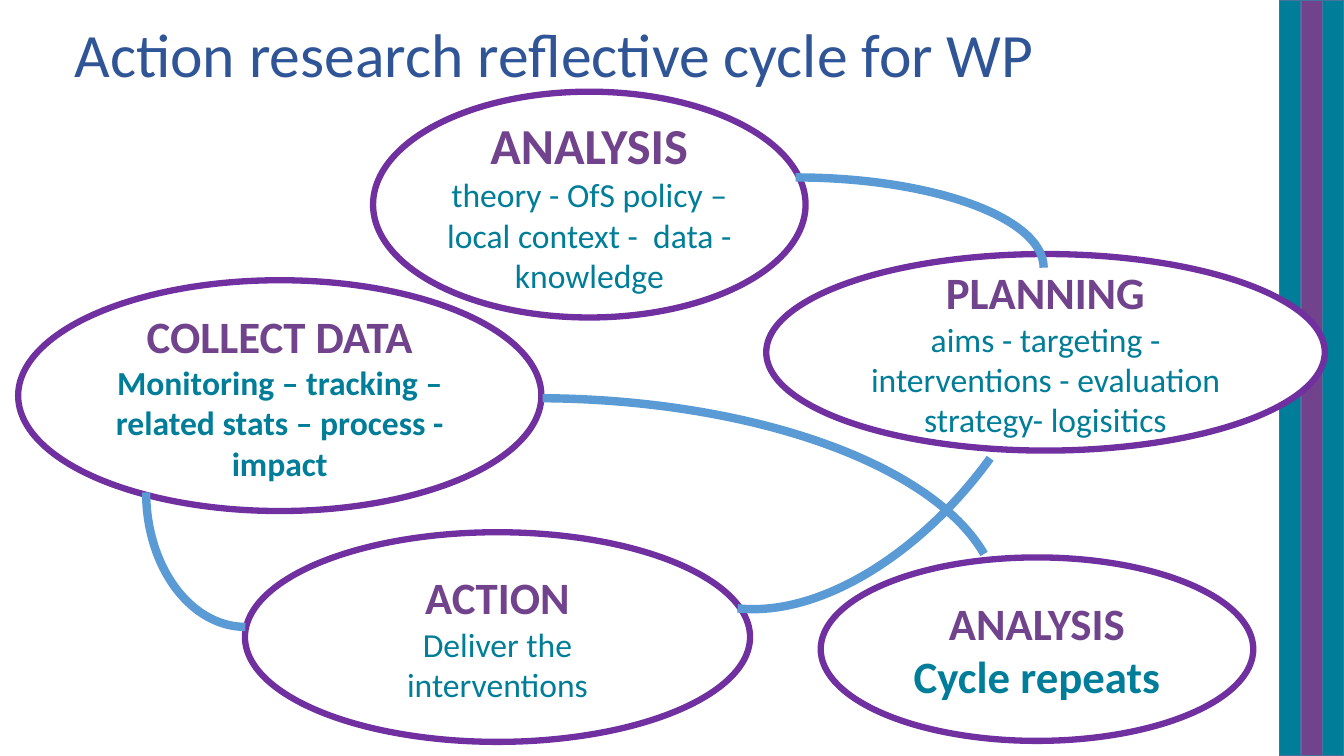
import pptx
import pptx.dml.color
import pptx.enum.shapes
import pptx.enum.text
import pptx.util

RGBColor = pptx.dml.color.RGBColor
TEAL = RGBColor(0x00, 0x7D, 0x98)
PLUM = RGBColor(0x71, 0x43, 0x8D)
VIOLET = RGBColor(0x70, 0x30, 0xA0)
NAVY = RGBColor(0x2F, 0x55, 0x97)
SKY = RGBColor(0x5B, 0x9B, 0xD5)
STEEL = RGBColor(0x43, 0x73, 0x9E)
WHITE = RGBColor(0xFF, 0xFF, 0xFF)

FONT = "Calibri"
WIDTH = pptx.util.Inches(13.33)
HEIGHT = pptx.util.Inches(7.5)
KIND = pptx.enum.shapes.MSO_SHAPE

BAR_LEFT, BAR_WIDTH = 95.2, 1.6

# place, head, head size, body, body size, body bold
STAGES = [
    ((27.76, 12.13, 32.18, 29.87), "ANALYSIS", 36,
     "theory - OfS policy – local context -  data - knowledge", 24, False),
    ((57.01, 33.6, 41.56, 26), "PLANNING", 32,
     "aims - targeting - interventions - evaluation strategy- logisitics",
     24, False),
    ((61.07, 73.73, 32.18, 24.27), "ANALYSIS", 32,
     "Cycle repeats", 32, True),
    ((18.23, 70.4, 37.58, 27.73), "ACTION", 32,
     "Deliver the interventions", 24, False),
    ((1.35, 37.07, 38.93, 30.53), "COLLECT DATA", 32,
     "Monitoring – tracking – related stats – process - impact", 24, True),
]

# place, end angle, turn, flipped
LINKS = [
    ((40.74, 23.47, 36.91, 23.87), (162, 0), 0, False),
    ((42.09, 24.53, 42.46, 45.47), (162, 208.99), 126, False),
    ((5.4, 52.67, 68.94, 55.07), (163.12, 212), 0, False),
    ((8.25, 52, 20.03, 26.27), (162, 0), 90, True),
]


def share(place):
    """Turn left, top, width, height in percent of the slide into lengths."""
    return [int(part * full / 100)
            for part, full in zip(place, (WIDTH, HEIGHT) * 2)]


def add_shape(slide, kind, place, fill, line, weight):
    shape = slide.shapes.add_shape(kind, *share(place))
    shape.shadow.inherit = False
    if fill is None:
        shape.fill.background()
    else:
        shape.fill.solid()
        shape.fill.fore_color.rgb = fill
    shape.line.color.rgb = line
    shape.line.width = pptx.util.Pt(weight)
    return shape


def style(para, size, color, bold=False):
    for run in para.runs:
        run.font.name = FONT
        run.font.size = pptx.util.Pt(size)
        run.font.bold = bold
        run.font.color.rgb = color


def add_bars(slide):
    for col, fill in enumerate((TEAL, PLUM, TEAL)):
        place = (BAR_LEFT + col * BAR_WIDTH, 0, BAR_WIDTH, 100)
        add_shape(slide, KIND.RECTANGLE, place, fill, STEEL, 1)


def set_title(slide, text):
    title = slide.shapes.title
    title.left, title.top, title.width, title.height = share(
        (4.8, 1.47, 88.37, 11.2))
    frame = title.text_frame
    frame.text = text
    frame.word_wrap = True
    frame.auto_size = pptx.enum.text.MSO_AUTO_SIZE.SHAPE_TO_FIT_TEXT
    frame.vertical_anchor = pptx.enum.text.MSO_ANCHOR.TOP
    para = frame.paragraphs[0]
    para.alignment = pptx.enum.text.PP_ALIGN.LEFT
    style(para, 44, NAVY)


def add_stage(slide, place, head, head_size, body, body_size, bold):
    oval = add_shape(slide, KIND.OVAL, place, WHITE, VIOLET, 4.5)
    frame = oval.text_frame
    frame.word_wrap = True
    frame.vertical_anchor = pptx.enum.text.MSO_ANCHOR.MIDDLE
    frame.text = head + "\n" + body
    for para in frame.paragraphs:
        para.alignment = pptx.enum.text.PP_ALIGN.CENTER
    style(frame.paragraphs[0], head_size, PLUM, True)
    style(frame.paragraphs[1], body_size, TEAL, bold)


def add_link(slide, place, ends, turn, flipped):
    arc = add_shape(slide, KIND.ARC, place, None, SKY, 6)
    arc.adjustments[0], arc.adjustments[1] = ends
    arc.rotation = turn
    if flipped:
        arc.element.spPr.xfrm.set("flipV", "1")


def main():
    deck = pptx.Presentation()
    deck.slide_width, deck.slide_height = WIDTH, HEIGHT
    slide = deck.slides.add_slide(deck.slide_layouts[5])
    add_bars(slide)
    set_title(slide, "Action research reflective cycle for WP")
    for stage in STAGES:
        add_stage(slide, *stage)
    for link in LINKS:
        add_link(slide, *link)
    deck.save("out.pptx")


if __name__ == "__main__":
    main()
